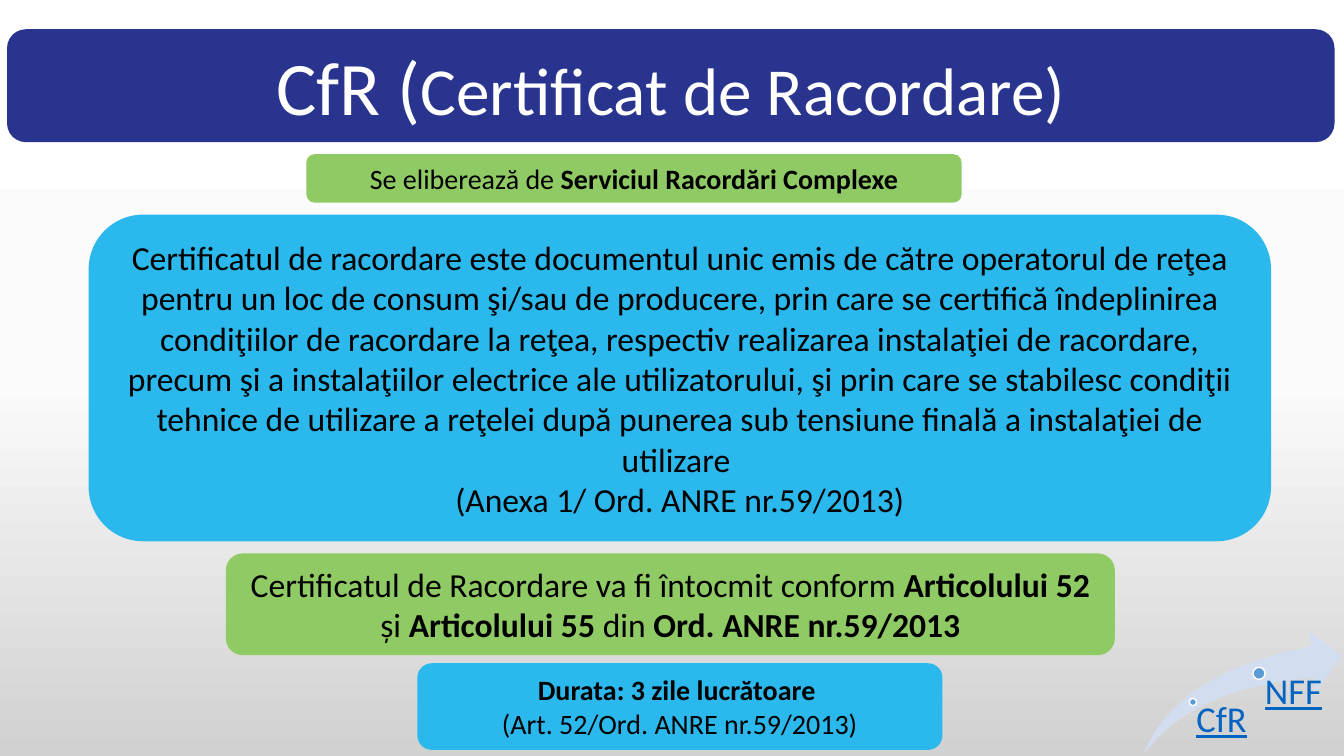
from copy import deepcopy
from dataclasses import dataclass

from pptx import Presentation
from pptx.dml.color import RGBColor
from pptx.enum.shapes import MSO_SHAPE
from pptx.enum.text import MSO_ANCHOR, MSO_AUTO_SIZE, PP_ALIGN
from pptx.oxml.ns import qn
from pptx.shapes.autoshape import Shape
from pptx.slide import Slide
from pptx.text.text import TextFrame
from pptx.util import Pt

FONT = "Calibri"
COLOURS = {
    "navy": "29348F",
    "sky": "2BB8ED",
    "green": "90CA65",
    "pale_blue": "D2DEEF",
    "dot": "5B9BD5",
    "link": "0563C1",
    "black": "000000",
    "white": "FFFFFF",
}
BACKGROUND_STOPS = ((0, "FFFFFF"), (0.5, "FBFBFB"), (1, "D1D1D1"))


@dataclass(frozen=True)
class Box:
    left: float
    top: float
    width: float
    height: float

    def lengths(self) -> tuple[Pt, Pt, Pt, Pt]:
        return Pt(self.left), Pt(self.top), Pt(self.width), Pt(self.height)


@dataclass(frozen=True)
class TextRun:
    text: str
    size: float
    bold: bool = False
    colour: str = "black"
    underline: bool = False


@dataclass(frozen=True)
class Card:
    box: Box
    colour: str
    paragraphs: list[list[TextRun]]


@dataclass(frozen=True)
class Milestone:
    dot: Box
    label: Box
    text: str
    inset: float


TITLE_BOX = Box(5.04, 20.88, 948.24, 80.64)
TITLE = [
    TextRun("CfR (", 54, colour="white"),
    TextRun("Certificat de Racordare)", 48, colour="white"),
]
CARDS = [
    Card(Box(218.88, 110.16, 468, 34.56), "green", [[
        TextRun("Se eliberează de ", 20),
        TextRun("Serviciul Racordări Complexe", 20, bold=True),
    ]]),
    Card(Box(63.36, 153.36, 844.56, 233.28), "sky", [
        [TextRun(
            "Certificatul de racordare este documentul unic emis de către "
            "operatorul de reţea pentru un loc de consum şi/sau de producere, "
            "prin care se certifică îndeplinirea condiţiilor de racordare la "
            "reţea, respectiv realizarea instalaţiei de racordare, precum şi a "
            "instalaţiilor electrice ale utilizatorului, şi prin care se "
            "stabilesc condiţii tehnice de utilizare a reţelei după punerea "
            "sub tensiune finală a instalaţiei de utilizare ", 24)],
        [TextRun("(Anexa 1/ Ord. ANRE nr.59/2013)", 24)],
    ]),
    Card(Box(161.28, 395.28, 635.04, 72.72), "green", [[
        TextRun("Certificatul de Racordare va fi întocmit conform ", 24),
        TextRun("Articolului 52 ", 24, bold=True),
        TextRun("și ", 24),
        TextRun("Articolului 55 ", 24, bold=True),
        TextRun("din", 24),
        TextRun(" Ord. ANRE nr.59/2013", 24, bold=True),
    ]]),
    Card(Box(298.08, 473.76, 375.12, 61.92), "sky", [
        [TextRun("Durata: 3 zile lucrătoare ", 20, bold=True)],
        [TextRun("(Art. 52/Ord. ANRE nr.59/2013)", 20)],
    ]),
]
ARROW_BOX = Box(816.48, 450.72, 141.84, 88.56)
MILESTONES = [
    Milestone(Box(849.6, 498.96, 5.04, 5.04), Box(851.76, 501.12, 46.08, 37.44), "CfR", 2.88),
    Milestone(Box(894.96, 476.64, 8.64, 8.64), Box(899.28, 480.96, 46.08, 58.32), "NFF", 4.32),
]


def rgb(name: str) -> RGBColor:
    return RGBColor.from_string(COLOURS[name])


def paint_background(slide: Slide) -> None:
    """Fill the slide with a three-stop gradient running from top to bottom."""
    fill = slide.background.fill
    fill.gradient()
    fill.gradient_angle = 270
    stop_list = slide.element.find(".//" + qn("a:gsLst"))
    stop_list.insert(1, deepcopy(stop_list[0]))
    for stop, (position, colour) in zip(fill.gradient_stops, BACKGROUND_STOPS):
        stop.position = position
        stop.color.rgb = RGBColor.from_string(colour)


def write_text(frame: TextFrame, paragraphs: list[list[TextRun]],
               alignment: PP_ALIGN = PP_ALIGN.CENTER, line_spacing: float = 1.0) -> None:
    frame.word_wrap = True
    frame.auto_size = MSO_AUTO_SIZE.NONE
    for index, text_runs in enumerate(paragraphs):
        paragraph = frame.add_paragraph() if index else frame.paragraphs[0]
        paragraph.alignment = alignment
        paragraph.line_spacing = line_spacing
        for text_run in text_runs:
            run = paragraph.add_run()
            run.text = text_run.text
            run.font.name = FONT
            run.font.size = Pt(text_run.size)
            run.font.bold = text_run.bold
            run.font.underline = text_run.underline
            run.font.color.rgb = rgb(text_run.colour)


def add_filled_shape(slide: Slide, kind: MSO_SHAPE, box: Box, colour: str) -> Shape:
    shape = slide.shapes.add_shape(kind, *box.lengths())
    shape.shadow.inherit = False
    shape.fill.solid()
    shape.fill.fore_color.rgb = rgb(colour)
    shape.line.fill.background()
    return shape


def add_title(slide: Slide) -> None:
    """Put the title placeholder on a rounded banner."""
    banner = add_filled_shape(slide, MSO_SHAPE.ROUNDED_RECTANGLE, TITLE_BOX, "navy")
    title = slide.shapes.title
    title.left, title.top, title.width, title.height = TITLE_BOX.lengths()
    title.text_frame.vertical_anchor = MSO_ANCHOR.MIDDLE
    write_text(title.text_frame, [TITLE])
    banner.element.addnext(title.element)


def add_card(slide: Slide, card: Card) -> None:
    shape = add_filled_shape(slide, MSO_SHAPE.ROUNDED_RECTANGLE, card.box, card.colour)
    shape.text_frame.vertical_anchor = MSO_ANCHOR.MIDDLE
    write_text(shape.text_frame, card.paragraphs)


def add_milestone(slide: Slide, milestone: Milestone) -> None:
    dot = add_filled_shape(slide, MSO_SHAPE.OVAL, milestone.dot, "dot")
    dot.line.color.rgb = rgb("white")
    dot.line.width = Pt(1)
    frame = slide.shapes.add_textbox(*milestone.label.lengths()).text_frame
    frame.margin_left = Pt(milestone.inset)
    frame.margin_top = frame.margin_right = frame.margin_bottom = Pt(0)
    label = TextRun(milestone.text, 26, colour="link", underline=True)
    write_text(frame, [[label]], PP_ALIGN.LEFT, 0.9)


def main() -> None:
    presentation = Presentation()
    presentation.slide_width = Pt(960)
    presentation.slide_height = Pt(540)
    slide = presentation.slides.add_slide(presentation.slide_layouts.get_by_name("Title Only"))
    paint_background(slide)
    add_title(slide)
    for card in CARDS:
        add_card(slide, card)
    arrow = add_filled_shape(slide, MSO_SHAPE.SWOOSH_ARROW, ARROW_BOX, "pale_blue")
    arrow.adjustments[0] = arrow.adjustments[1] = 0.25
    for milestone in MILESTONES:
        add_milestone(slide, milestone)
    presentation.save("out.pptx")


if __name__ == "__main__":
    main()
